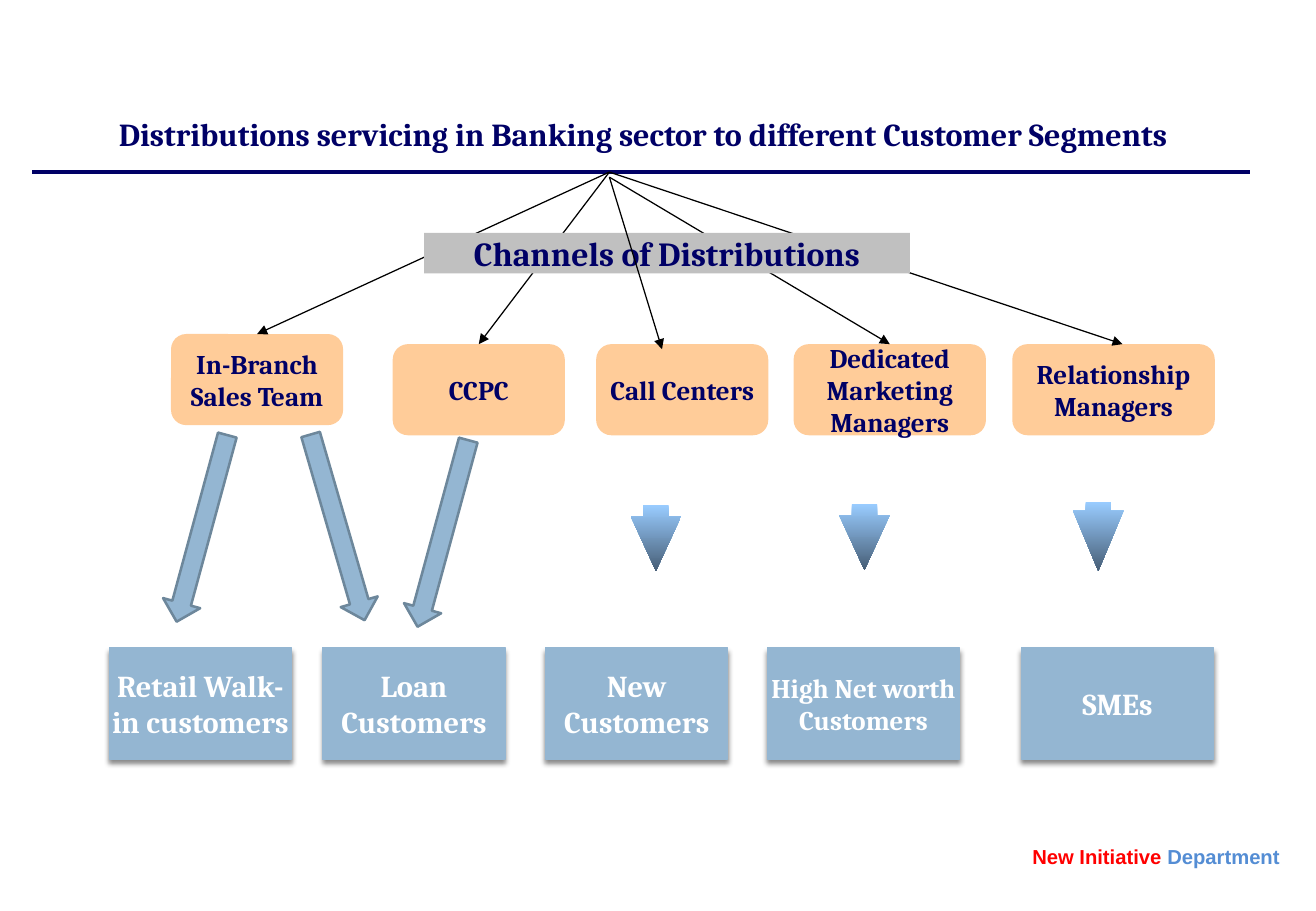
from lxml import etree
from pptx import Presentation
from pptx.dml.color import RGBColor
from pptx.enum.shapes import MSO_CONNECTOR, MSO_SHAPE
from pptx.enum.text import MSO_ANCHOR, PP_ALIGN
from pptx.oxml.ns import qn
from pptx.util import Inches, Pt

MIDDLE, TOP = MSO_ANCHOR.MIDDLE, MSO_ANCHOR.TOP
CENTER, LEFT = PP_ALIGN.CENTER, PP_ALIGN.LEFT
STRAIGHT = MSO_CONNECTOR.STRAIGHT
RECTANGLE, ROUNDED = MSO_SHAPE.RECTANGLE, MSO_SHAPE.ROUNDED_RECTANGLE
DOWN_ARROW, RIGHT_ARROW = MSO_SHAPE.DOWN_ARROW, MSO_SHAPE.RIGHT_ARROW

COLORS = {
    "navy": "000066", "black": "000000", "white": "FFFFFF", "peach": "FFCC99",
    "gray": "C0C0C0", "blue": "94B6D2", "outline": "6D879B", "sky": "99CCFF",
    "slate": "475E76", "red": "FF0000", "footer": "548DD4",
}

# The slide is a grid of square cells; every box is (column, row, columns, rows)
COLUMNS, ROWS = 130, 90
CELL = Inches(7.5) / ROWS

CHANNELS = [
    ("In-Branch Sales Team", (16.9, 33, 17, 9)),
    ("CCPC", (38.8, 34, 17, 9)),
    ("Call Centers", (58.9, 34, 17, 9)),
    ("Dedicated Marketing Managers", (78.4, 34, 19, 9)),
    ("Relationship Managers", (100, 34, 20, 9)),
]
HUB = 60.2
SPOKES = [  # start row, end column, end row
    (17, 25.4, 33), (17, 47.3, 34), (17.5, 87.9, 34), (17, 110.9, 34),
]
CALL_CENTER_SPOKE = (17.5, 65.4, 34.5)
SEGMENTS = [
    ("Retail Walk-in customers", 10.8, 18, 18),
    ("Loan Customers", 31.9, 18, 18),
    ("New Customers", 53.9, 18, 18),
    ("High Net worth Customers", 75.8, 19, 16),
    ("SMEs", 100.9, 19, 18),
]
SLANTED_ARROWS = [(10.4, 50.3, 105.2), (23.8, 50.2, 73.8), (34.2, 50.8, 105.2)]
DOWN_ARROWS = [  # box, head length
    ((62.3, 49.9, 5, 6.5), 1.08),
    ((82.9, 49.8, 5, 6.5), 1.08),
    ((106, 49.6, 5, 6.8), 1.19),
]


def cells(*counts):
    return [round(count * CELL) for count in counts]


def rgb(name):
    return RGBColor.from_string(COLORS[name])


def format_run(run, size, color, font="Cambria"):
    run.font.size, run.font.name, run.font.bold = Pt(size), font, True
    run.font.color.rgb = rgb(color)


def set_frame(frame, anchor=MIDDLE, inset=0):
    frame.word_wrap = True
    frame.vertical_anchor = anchor
    frame.margin_left = frame.margin_right = 0
    frame.margin_top = frame.margin_bottom = Inches(inset)


def add_block(slide, kind, box, fill, line=None, width=0.75):
    shape = slide.shapes.add_shape(kind, *cells(*box))
    shape.shadow.inherit = False
    shape.fill.solid()
    shape.fill.fore_color.rgb = rgb(fill)
    if line:
        shape.line.color.rgb = rgb(line)
        shape.line.width = Pt(width)
    else:
        shape.line.fill.background()
    return shape


def add_label(shape, text, size, color, anchor=MIDDLE):
    set_frame(shape.text_frame, anchor)
    paragraph = shape.text_frame.paragraphs[0]
    paragraph.text = text
    paragraph.alignment = CENTER
    paragraph.space_before = Pt(size * 0.2)
    format_run(paragraph.runs[0], size, color)


def add_line(slide, start, end, color, width, arrowhead=False):
    line = slide.shapes.add_connector(STRAIGHT, *cells(*start, *end))
    line.line.color.rgb = rgb(color)
    line.line.width = Pt(width)
    if arrowhead:
        etree.SubElement(line.line._get_or_add_ln(), qn("a:tailEnd"), type="triangle")
    etree.SubElement(line._element.spPr, qn("a:effectLst"))


def add_drop_shadow(shape):
    effects = shape._element.spPr.find(qn("a:effectLst"))
    shadow = etree.SubElement(effects, qn("a:outerShdw"), blurRad=str(Pt(3)),
                              dist=str(Pt(2.4)), dir="5400000", rotWithShape="0")
    color = etree.SubElement(shadow, qn("a:srgbClr"), val=COLORS["black"])
    etree.SubElement(color, qn("a:alpha"), val="45000")


def add_title(slide, box):
    title = slide.shapes.title
    title.left, title.top, title.width, title.height = cells(*box)
    set_frame(title.text_frame, inset=0.12)
    paragraph = title.text_frame.paragraphs[0]
    paragraph.text = "Distributions servicing in Banking sector to different Customer Segments"
    paragraph.alignment = CENTER
    paragraph.line_spacing = Pt(25.8)
    format_run(paragraph.runs[0], 19, "navy")
    add_line(slide, (3.2, 17), (123.5, 17), "navy", 2.25)


def add_spoke(slide, start_row, column, row):
    add_line(slide, (HUB, start_row), (column, row), "black", 0.75, arrowhead=True)


def add_channels(slide, banner_box):
    for name, box in CHANNELS:
        add_label(add_block(slide, ROUNDED, box, "peach"), name, 16, "navy")
    for spoke in SPOKES:
        add_spoke(slide, *spoke)
    banner = add_block(slide, RECTANGLE, banner_box, "gray")
    add_label(banner, "Channels of Distributions", 20, "navy", TOP)
    # This spoke passes in front of the banner
    add_spoke(slide, *CALL_CENTER_SPOKE)


def add_segments(slide, top, height):
    for name, left, width, size in SEGMENTS:
        shape = add_block(slide, RECTANGLE, (left, top, width, height), "blue", "blue")
        add_drop_shadow(shape)
        add_label(shape, name, size, "white")


def add_flow_arrows(slide):
    for left, top, rotation in SLANTED_ARROWS:
        arrow = add_block(slide, RIGHT_ARROW, (left, top, 19.1, 3.8), "blue", "outline", 1.5)
        arrow.rotation = rotation
    for box, head in DOWN_ARROWS:
        arrow = add_block(slide, DOWN_ARROW, box, "sky")
        arrow.adjustments[1] = head
        arrow.fill.gradient()
        arrow.fill.gradient_angle = 270
        for stop, color in zip(arrow.fill.gradient_stops, ("sky", "slate")):
            stop.color.rgb = rgb(color)


def add_footer(slide, box):
    frame = slide.shapes.add_textbox(*cells(*box)).text_frame
    frame.word_wrap = False
    frame.vertical_anchor = MIDDLE
    paragraph = frame.paragraphs[0]
    paragraph.alignment = LEFT
    for text, color in (("New Initiative ", "red"), ("Department", "footer")):
        run = paragraph.add_run()
        run.text = text
        format_run(run, 12, color, "Arial")


def main():
    presentation = Presentation()
    presentation.slide_width, presentation.slide_height = cells(COLUMNS, ROWS)
    slide = presentation.slides.add_slide(presentation.slide_layouts[5])
    add_title(slide, (0.2, 8, 126.7, 10))
    add_channels(slide, (41.9, 23, 48, 4))
    add_segments(slide, 64, 11)
    add_flow_arrows(slide)
    add_footer(slide, (100.8, 82.8, 27.1, 3.6))
    presentation.save("out.pptx")


if __name__ == "__main__":
    main()
